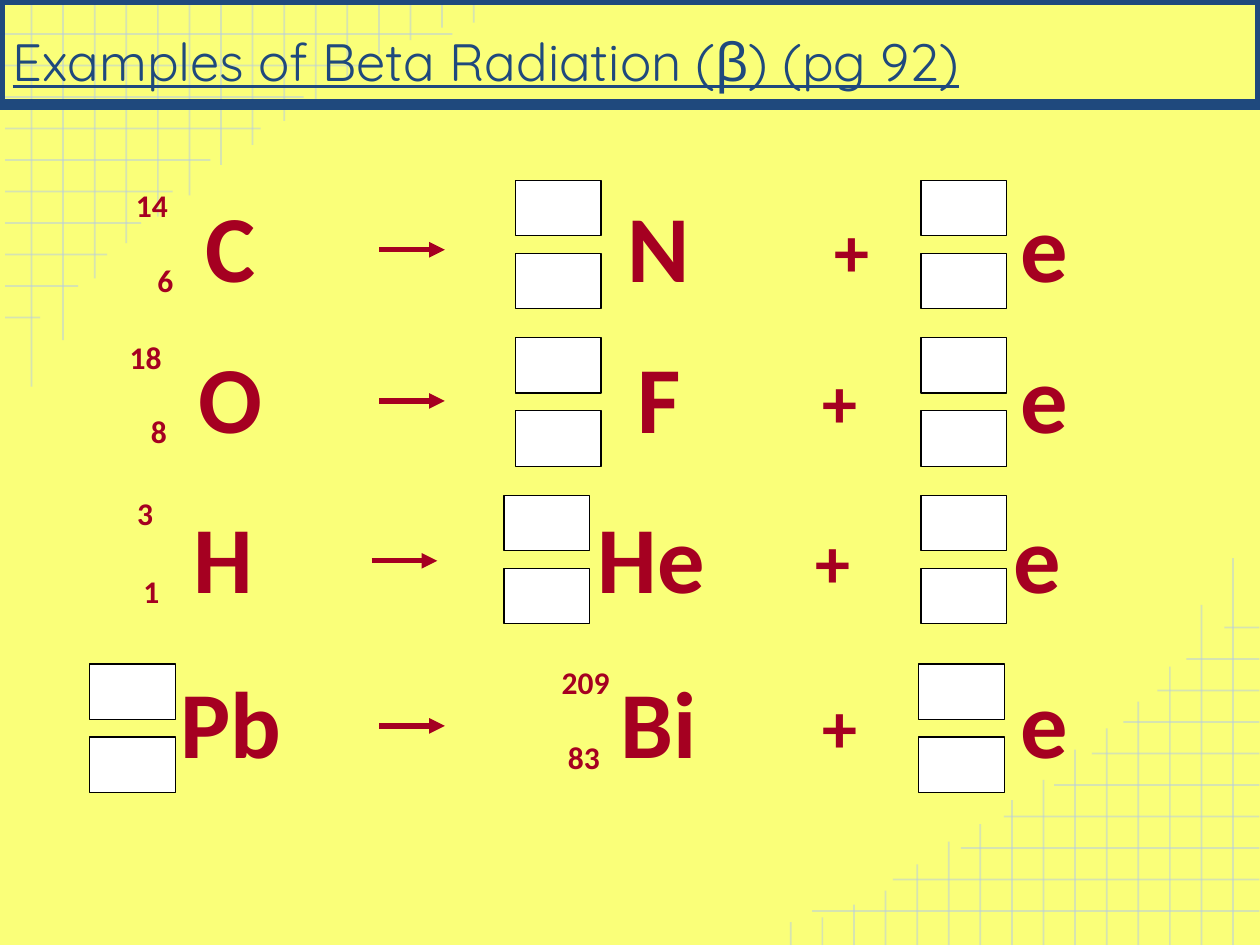
from dataclasses import dataclass

from lxml import etree
from pptx import Presentation
from pptx.dml.color import RGBColor
from pptx.enum import shapes, text
from pptx.oxml import ns
from pptx.util import Pt

YELLOW = RGBColor(0xFA, 0xFF, 0x79)
NAVY = RGBColor(0x1F, 0x49, 0x7D)
CRIMSON = RGBColor(0xA5, 0x00, 0x21)
PALE_BLUE = RGBColor(0xB7, 0xCC, 0xE4)
WHITE = RGBColor(0xFF, 0xFF, 0xFF)
BLACK = RGBColor(0x00, 0x00, 0x00)

WIDTH, HEIGHT = 720, 540
GRID_STEP = 18
ROW_ENDS = [258.5, 212.4, 173.5, 149, 120.2, 98.6, 80.6, 61.2, 44.6, 23]
COLUMN_ENDS = [221, 194.4, 159.1, 139, 123.8, 111.6, 94.3, 82.8, 69.1, 59,
               46.1, 31, 23, 15.8, 13]

TITLE_FONT = {"name": "Quicksand", "size": Pt(30), "underline": True, "bold": False}
SYMBOL_FONT = {"name": "Calibri", "size": Pt(54), "bold": True}
PLUS_FONT = {**SYMBOL_FONT, "size": Pt(40)}
NUMBER_FONT = {**SYMBOL_FONT, "size": Pt(18)}

REACTANT_X, PRODUCT_X, ELECTRON_X = 131.8, 376.6, 596.9
ARROW_X, ARROW_LENGTH, ARROW_DROP = 216.7, 37.5, 39
PLUS_DROP = 11.5
BLANK_WIDTH, BLANK_HEIGHT, BLANK_STEP = 49, 31.7, 41.8


@dataclass
class Decay:
    """One equation; numbers are (label, left, top), blank_lefts start pairs of boxes."""
    reactant: str
    product: str
    top: float
    numbers: list
    blank_top: float
    blank_lefts: list
    shift: float = 0
    plus_x: float = 480.2


DECAYS = [
    Decay("C", "N", 103.7, [("14", 70.6, 103), ("6", 82.8, 145.4)],
          103, [294.5, 526.3], plus_x=487),
    Decay("O", "F", 190.1, [("18", 67, 189.4), ("8", 79.2, 231.8)],
          193, [294.5, 526.3]),
    Decay("H", "He", 281.5, [("3", 71.3, 278.6), ("1", 74.9, 323.3)],
          283, [288, 526.3], shift=-4.3),
    Decay("Pb", "Bi", 375.8, [("209", 313.9, 375.1), ("83", 317.5, 418.3)],
          379.4, [51.1, 524.9]),
]


def apply_format(target, values):
    for name, value in values.items():
        setattr(target, name, value)


def write(para, wording, font, color):
    span = para.add_run()
    span.text = wording
    apply_format(span.font, font)
    span.font.color.rgb = color


def add_line(page, start, end, color, weight):
    points = [Pt(value) for value in (*start, *end)]
    line = page.shapes.add_connector(shapes.MSO_CONNECTOR.STRAIGHT, *points)
    line.line.color.rgb = color
    line.line.width = Pt(weight)
    etree.SubElement(line.element.spPr, ns.qn("a:effectLst"))
    return line


def add_grid_line(page, start, end):
    line = add_line(page, start, end, PALE_BLUE, 1)
    color = next(line.element.iter(ns.qn("a:srgbClr")))
    etree.SubElement(color, ns.qn("a:alpha"), val="53000")


def add_corner_grids(page):
    """Draw the top left grid and the same grid turned half round at bottom right."""
    lines = [((3, 19.4 + GRID_STEP * i), (end, 19.4 + GRID_STEP * i))
             for i, end in enumerate(ROW_ENDS)]
    lines += [((18 + 18.05 * i, end), (18 + 18.05 * i, 0))
              for i, end in enumerate(COLUMN_ENDS)]
    for line in lines:
        add_grid_line(page, *line)
    for line in lines:
        add_grid_line(page, *[(WIDTH + 2.6 - x, HEIGHT - y) for x, y in line])


def add_arrow(page, left, y):
    arrow = add_line(page, (left, y), (left + ARROW_LENGTH, y), CRIMSON, 3)
    outline = arrow.line._get_or_add_ln()
    etree.SubElement(outline, ns.qn("a:tailEnd"), type="triangle")


def add_label(page, wording, left, top, width, height, font, align):
    box = page.shapes.add_textbox(Pt(left), Pt(top), Pt(width), Pt(height))
    box.text_frame.word_wrap = True
    para = box.text_frame.paragraphs[0]
    para.alignment = align
    write(para, wording, font, CRIMSON)


def add_centred(page, wording, center, top, width, height, font):
    add_label(page, wording, center - width / 2, top, width, height, font,
              text.PP_ALIGN.CENTER)


def add_blank(page, left, top):
    blank = page.shapes.add_shape(shapes.MSO_SHAPE.RECTANGLE, Pt(left), Pt(top),
                                  Pt(BLANK_WIDTH), Pt(BLANK_HEIGHT))
    blank.shadow.inherit = False
    blank.fill.solid()
    blank.fill.fore_color.rgb = WHITE
    blank.line.color.rgb = BLACK
    blank.line.width = Pt(0.75)


def add_decay(page, decay):
    symbols = [(decay.reactant, REACTANT_X), (decay.product, PRODUCT_X), ("e", ELECTRON_X)]
    for symbol, center in symbols:
        add_centred(page, symbol, center + decay.shift, decay.top, 112, 75, SYMBOL_FONT)
    add_centred(page, "+", decay.plus_x + decay.shift, decay.top + PLUS_DROP,
                37.5, 37.5, PLUS_FONT)
    add_arrow(page, ARROW_X + decay.shift, decay.top + ARROW_DROP)
    for number, left, top in decay.numbers:
        add_label(page, number, left, top, 45, 37.5, NUMBER_FONT, text.PP_ALIGN.LEFT)
    for left in decay.blank_lefts:
        for level in range(2):
            add_blank(page, left, decay.blank_top + level * BLANK_STEP)


def set_title(page, wording):
    title = page.shapes.title
    apply_format(title, {"left": 0, "top": 0, "width": Pt(WIDTH), "height": Pt(59.8)})
    title.line.color.rgb = NAVY
    title.line.width = Pt(6)
    frame = title.text_frame
    margins = {f"margin_{side}": Pt(7.2) for side in ("left", "top", "right", "bottom")}
    apply_format(frame, {**margins, "word_wrap": True,
                         "auto_size": text.MSO_AUTO_SIZE.NONE,
                         "vertical_anchor": text.MSO_ANCHOR.BOTTOM})
    frame.paragraphs[0].alignment = text.PP_ALIGN.LEFT
    write(frame.paragraphs[0], wording, TITLE_FONT, NAVY)
    # Bring the title in front of the grid.
    title.element.getparent().append(title.element)


def main():
    deck = Presentation()
    deck.slide_width, deck.slide_height = Pt(WIDTH), Pt(HEIGHT)
    page = deck.slides.add_slide(deck.slide_layouts[5])
    page.background.fill.solid()
    page.background.fill.fore_color.rgb = YELLOW
    add_corner_grids(page)
    set_title(page, "Examples of Beta Radiation (β) (pg 92)")
    for decay in DECAYS:
        add_decay(page, decay)
    deck.save("out.pptx")


if __name__ == "__main__":
    main()
